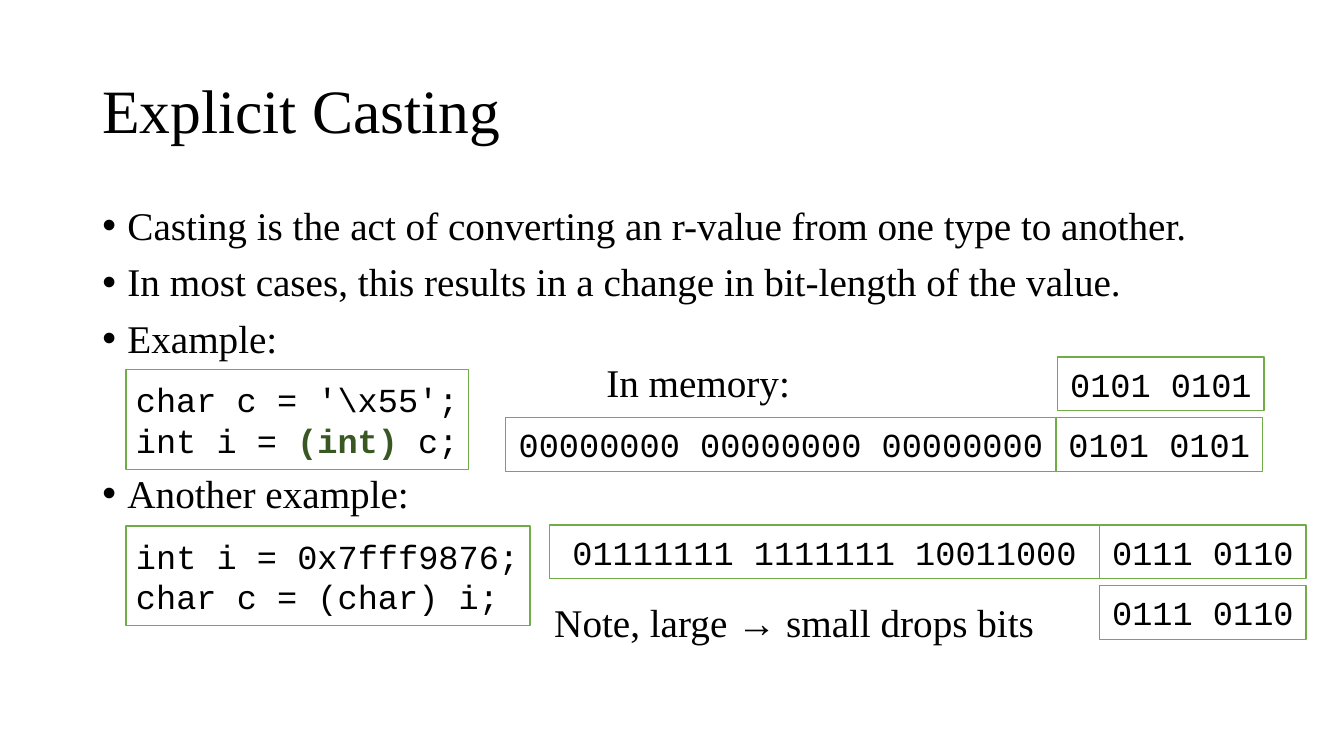
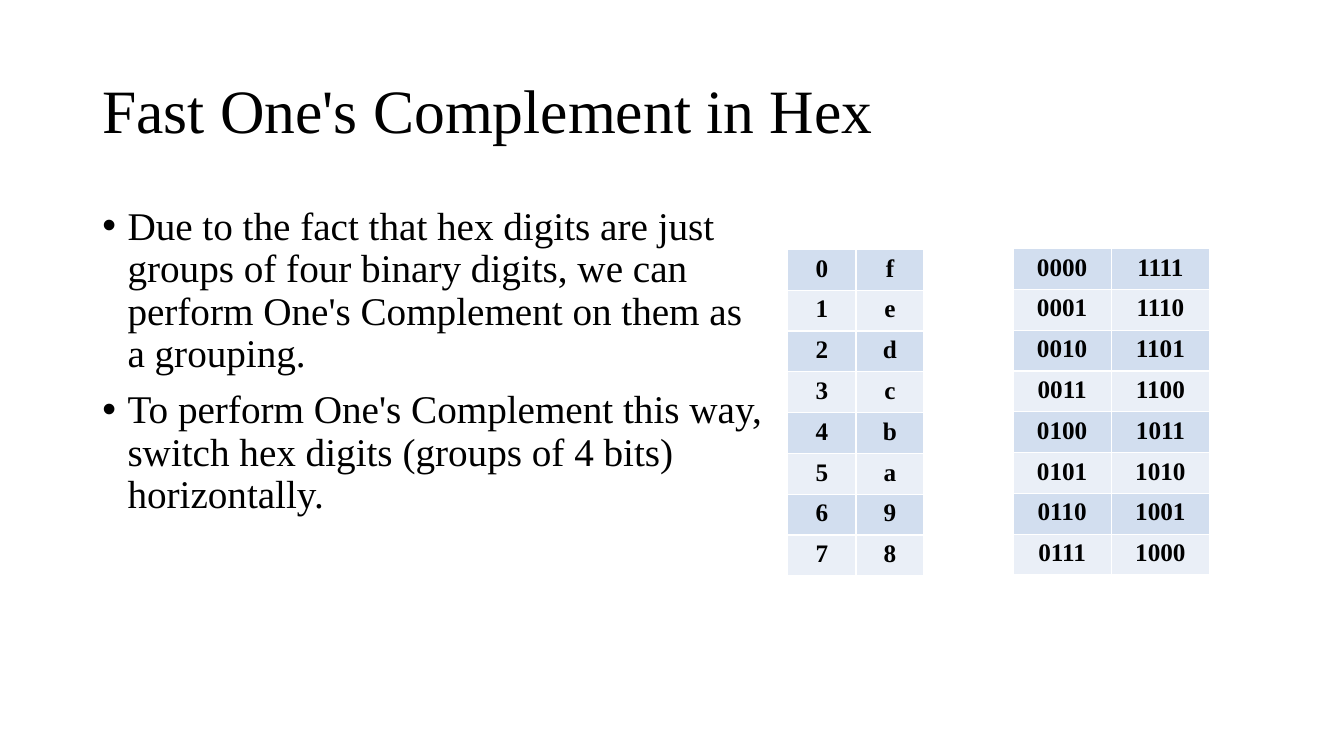
from lxml.etree import SubElement
from pptx import Presentation
from pptx.dml.color import RGBColor
from pptx.enum.shapes import MSO_SHAPE
from pptx.enum.text import MSO_ANCHOR, PP_ALIGN
from pptx.oxml.ns import qn
from pptx.util import Inches, Pt

COLS, ROWS = 160, 90
UNIT = Inches(1) / 12
HUES = {"ink": "000000", "paper": "FFFFFF", "edge": "70AD47",
        "cast": "385723", "odd": "D2DEEF", "even": "EAEFF7"}
SERIF, MONO = "Times New Roman", "Courier New"
BYTE, WIDE, HIGH = 24.6, 65.5, 6.4


def grid(*cells):
    """Turn grid columns and rows into slide lengths."""
    return [round(cell * UNIT) for cell in cells]


def hue(name):
    return RGBColor.from_string(HUES[name])


class Deck:
    def __init__(self):
        self.prs = Presentation()
        self.prs.slide_width, self.prs.slide_height = grid(COLS, ROWS)
        self.slide = None

    def page(self, title):
        self.slide = self.prs.slides.add_slide(self.prs.slide_layouts[6])
        para = self.box(11, 4.8, 138, 17.4, MSO_ANCHOR.MIDDLE).paragraphs[0]
        para.line_spacing = 0.9
        self.run(para, title, 44)

    def run(self, para, text, size, font=SERIF, color="ink", bold=False):
        run = para.add_run()
        run.text = text
        run.font.size, run.font.name, run.font.bold = Pt(size), font, bold
        run.font.color.rgb = hue(color)

    def box(self, left, top, width, height, anchor=MSO_ANCHOR.TOP):
        frame = self.slide.shapes.add_textbox(*grid(left, top, width, height)).text_frame
        frame.word_wrap, frame.vertical_anchor = True, anchor
        return frame

    def label(self, left, top, width, text):
        frame = self.box(left, top, width, 6, MSO_ANCHOR.MIDDLE)
        self.run(frame.paragraphs[0], text, 28)

    def points(self, width, items):
        """Write bullets; each item is (space before, line, line, ...)."""
        frame = self.box(11, 24, width, 57)
        for num, (gap, *lines) in enumerate(items):
            para = frame.add_paragraph() if num else frame.paragraphs[0]
            para.line_spacing, para.space_before = 0.9, Pt(gap)
            for row, line in enumerate(lines):
                if row:
                    para.add_line_break()
                self.run(para, line, 28)
            props = para._p.get_or_add_pPr()
            props.set("marL", str(Inches(0.25)))
            props.set("indent", str(-Inches(0.25)))
            SubElement(props, qn("a:buFont"), typeface="Arial")
            SubElement(props, qn("a:buChar"), char="•")

    def code(self, left, top, width, height, lines, align=PP_ALIGN.LEFT):
        """Draw a framed box; each line is a list of (text, style) runs."""
        rect = self.slide.shapes.add_shape(
            MSO_SHAPE.RECTANGLE, *grid(left, top, width, height))
        rect.shadow.inherit = False
        rect.fill.solid()
        rect.fill.fore_color.rgb = hue("paper")
        rect.line.color.rgb, rect.line.width = hue("edge"), Pt(1)
        frame = rect.text_frame
        frame.word_wrap, frame.vertical_anchor = False, MSO_ANCHOR.MIDDLE
        for num, line in enumerate(lines):
            para = frame.add_paragraph() if num else frame.paragraphs[0]
            para.alignment = align
            for text, style in line:
                self.run(para, text, 24, MONO, **style)

    def bits(self, left, top, text, width=BYTE):
        self.code(left, top, width, HIGH, [[(text, {})]], PP_ALIGN.CENTER)

    def word(self, left, top, upper, lower):
        """Draw the upper bytes with the lowest byte joined on the right."""
        self.bits(left + WIDE, top, lower)
        self.bits(left, top, upper, WIDE)

    def table(self, left, top, col, row, data):
        wide, high = len(data[0]), len(data)
        table = self.slide.shapes.add_table(
            high, wide, *grid(left, top, col * wide, row * high)).table
        table.first_row = table.horz_banding = False
        for y, line in enumerate(data):
            for x, text in enumerate(line):
                self.cell(table.cell(y, x), text, "even" if y % 2 else "odd")

    def cell(self, cell, text, color):
        props = cell._tc.get_or_add_tcPr()
        for side in "LRTB":
            line = SubElement(props, qn(f"a:ln{side}"), w=str(Pt(1)))
            fill = SubElement(line, qn("a:solidFill"))
            SubElement(fill, qn("a:srgbClr"), val=HUES["paper"])
        cell.fill.solid()
        cell.fill.fore_color.rgb = hue(color)
        para = cell.text_frame.paragraphs[0]
        para.alignment = PP_ALIGN.CENTER
        self.run(para, text, 18, bold=True)


def casting(deck):
    deck.page("Explicit Casting")
    deck.points(138, [
        (10, "Casting is the act of converting an r-value from one type to another."),
        (10, "In most cases, this results in a change in bit-length of the value."),
        (10, "Example:"),
        (80.5, "Another example:")])
    deck.label(71, 42.5, 30, "In memory:")
    deck.label(64.8, 71, 62, "Note, large → small drops bits")
    deck.code(15, 44, 40.8, 11.9, [
        [("char c = '\\x55';", {})],
        [("int i = ", {}), ("(int) ", {"color": "cast", "bold": True}), ("c;", {})]])
    deck.code(15, 62.6, 48.1, 11.9, [
        [("int i = 0x7fff9876;", {})], [("char c = (char) i;", {})]])
    deck.bits(125.9, 42.5, "0101 0101")
    deck.word(60.2, 49.7, "00000000 00000000 00000000", "0101 0101")
    deck.word(65.4, 62.5, "01111111 1111111 10011000", "0111 0110")
    deck.bits(130.9, 69.7, "0111 0110")


def hexes(deck):
    deck.page("Fast One's Complement in Hex")
    deck.points(82, [
        (10, "Due to the fact that hex digits are just",
         "groups of four binary digits, we can",
         "perform One's Complement on them as", "a grouping."),
        (10, "To perform One's Complement this way,",
         "switch hex digits (groups of 4 bits)", "horizontally.")])
    for left, top, col, form in ((93.8, 29.7, 8.1, "x"), (120.6, 29.6, 11.7, "04b")):
        pairs = [(format(num, form), format(15 - num, form)) for num in range(8)]
        deck.table(left, top, col, 4.86, pairs)


def main():
    deck = Deck()
    casting(deck)
    hexes(deck)
    deck.prs.save("out.pptx")


if __name__ == "__main__":
    main()
